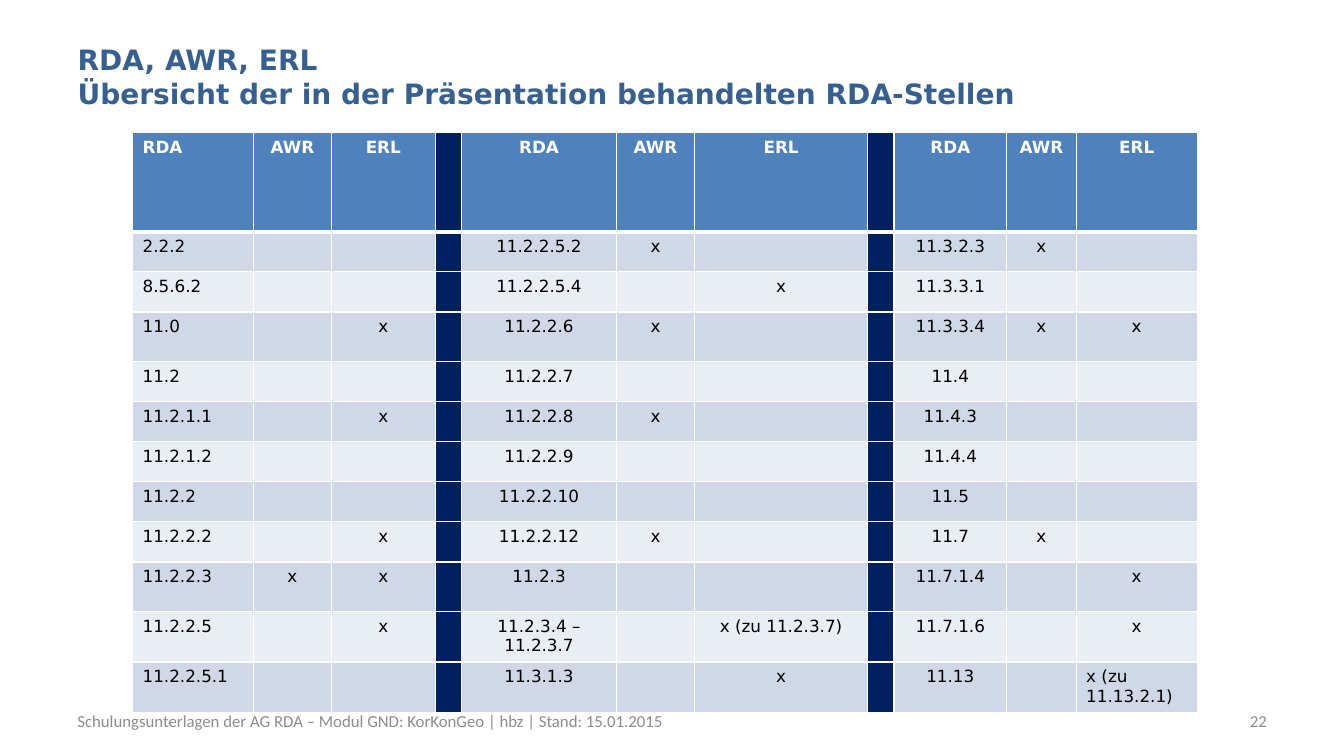
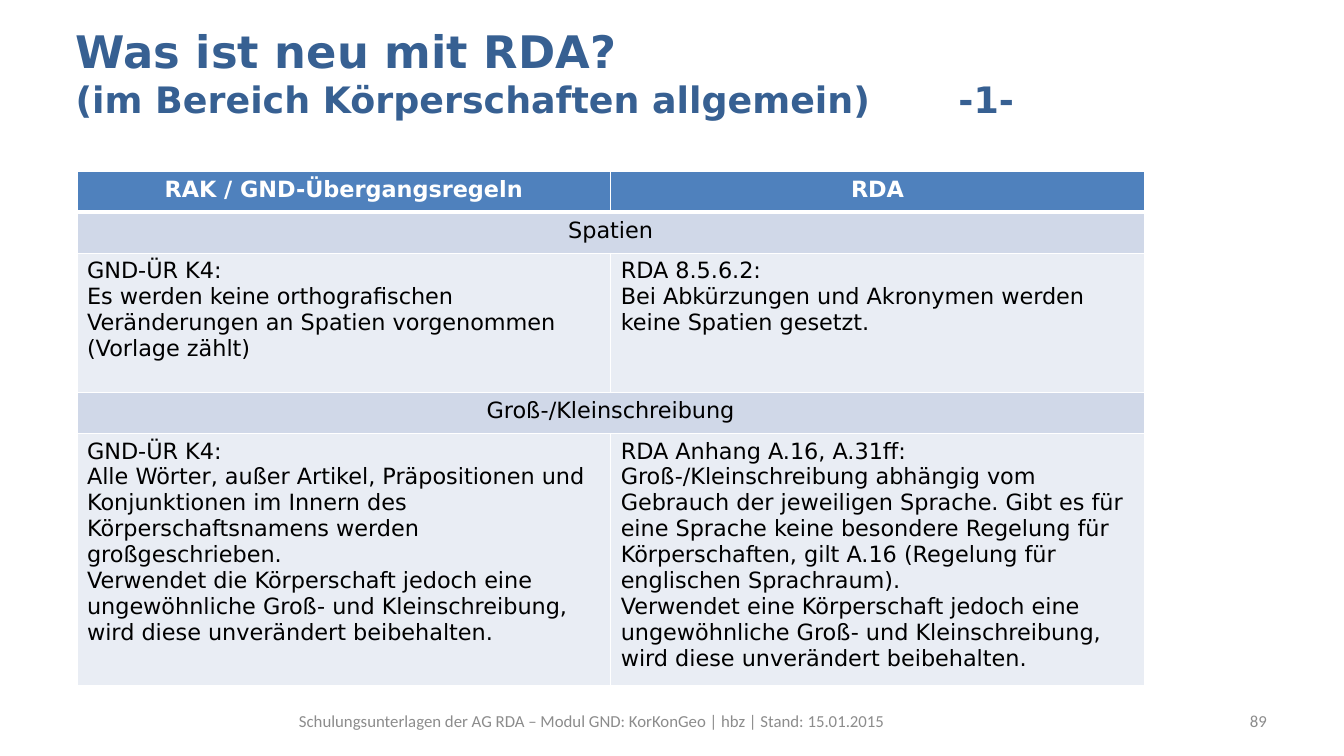
from lxml import etree
from pptx import Presentation
from pptx import util as u
from pptx.dml.color import RGBColor
from pptx.enum import text as t
from pptx.oxml import ns

INK = RGBColor(0x37, 0x60, 0x92)
HEAD = RGBColor(0x4F, 0x81, 0xBD)
NAVY = RGBColor(0x00, 0x20, 0x60)
DARK = RGBColor(0xD0, 0xD8, 0xE8)
PALE = RGBColor(0xE9, 0xED, 0xF4)
WHITE = RGBColor(0xFF, 0xFF, 0xFF)
BLACK = RGBColor(0, 0, 0)
GREY = RGBColor(0x8C, 0x8C, 0x8C)

LEFT, MID, RIGHT = t.PP_ALIGN.LEFT, t.PP_ALIGN.CENTER, t.PP_ALIGN.RIGHT
MAIN, FOOT = "DejaVu Sans", "Calibri"
CREDIT = "Schulungsunterlagen der AG RDA – Modul GND: KorKonGeo | hbz | Stand: 15.01.2015"

# Overview: three column groups of (RDA, AWR, ERL)
NAMES = ("RDA", "AWR", "ERL")
FIRST = [
    ("2.2.2", "", ""), ("8.5.6.2", "", ""), ("11.0", "", "x"), ("11.2", "", ""),
    ("11.2.1.1", "", "x"), ("11.2.1.2", "", ""), ("11.2.2", "", ""),
    ("11.2.2.2", "", "x"), ("11.2.2.3", "x", "x"), ("11.2.2.5", "", "x"),
    ("11.2.2.5.1", "", ""),
]
SECOND = [
    ("11.2.2.5.2", "x", ""), ("11.2.2.5.4", "", "x"), ("11.2.2.6", "x", ""),
    ("11.2.2.7", "", ""), ("11.2.2.8", "x", ""), ("11.2.2.9", "", ""),
    ("11.2.2.10", "", ""), ("11.2.2.12", "x", ""), ("11.2.3", "", ""),
    ("11.2.3.4 –\n11.2.3.7", "", "x (zu 11.2.3.7)"), ("11.3.1.3", "", "x"),
]
THIRD = [
    ("11.3.2.3", "x", ""), ("11.3.3.1", "", ""), ("11.3.3.4", "x", "x"),
    ("11.4", "", ""), ("11.4.3", "", ""), ("11.4.4", "", ""), ("11.5", "", ""),
    ("11.7", "x", ""), ("11.7.1.4", "", "x"), ("11.7.1.6", "", "x"),
    ("11.13", "", "x (zu 11.13.2.1)"),
]

# Comparison: a row with one entry spans the table
RULES = [
    ("RAK / GND-Übergangsregeln", "RDA"),
    ("Spatien",),
    ("GND-ÜR K4:\nEs werden keine orthografischen Veränderungen an Spatien "
     "vorgenommen (Vorlage zählt)",
     "RDA 8.5.6.2:\nBei Abkürzungen und Akronymen werden keine Spatien gesetzt."),
    ("Groß-/Kleinschreibung",),
    ("GND-ÜR K4:\nAlle Wörter, außer Artikel, Präpositionen und Konjunktionen im "
     "Innern des Körperschaftsnamens werden großgeschrieben.\n"
     "Verwendet die Körperschaft jedoch eine ungewöhnliche Groß- und "
     "Kleinschreibung, wird diese unverändert beibehalten.",
     "RDA Anhang A.16, A.31ff:\nGroß-/Kleinschreibung abhängig vom Gebrauch der "
     "jeweiligen Sprache. Gibt es für eine Sprache keine besondere Regelung für "
     "Körperschaften, gilt A.16 (Regelung für englischen Sprachraum).\n"
     "Verwendet eine Körperschaft jedoch eine ungewöhnliche Groß- und "
     "Kleinschreibung, wird diese unverändert beibehalten."),
]


def put(obj, **vals):
    for key, val in vals.items():
        setattr(obj, key, val)


def style(run, size, color, name=MAIN, bold=False):
    put(run.font, size=u.Pt(size), name=name, bold=bold)
    run.font.color.rgb = color


def place(shape, box):
    for key, val in zip(("left", "top", "width", "height"), box):
        setattr(shape, key, u.Cm(val))


def title(slide, box, lines, tab=None):
    """Format the title; lines are (text, size) pairs."""
    shape = slide.shapes.title
    place(shape, box)
    frame = shape.text_frame
    put(frame, word_wrap=True, auto_size=t.MSO_AUTO_SIZE.NONE,
        vertical_anchor=t.MSO_ANCHOR.MIDDLE)
    para = frame.paragraphs[0]
    para.alignment = LEFT
    if tab:
        stops = etree.SubElement(para._p.get_or_add_pPr(), ns.qn("a:tabLst"))
        etree.SubElement(stops, ns.qn("a:tab"), pos=str(u.Cm(tab)), algn="l")
    for i, (words, size) in enumerate(lines):
        if i:
            para.add_line_break()
        run = para.add_run()
        run.text = words
        style(run, size, INK, bold=True)


def label(slide, box, words, align):
    shape = slide.shapes.add_textbox(*map(u.Cm, box))
    frame = shape.text_frame
    put(frame, word_wrap=True, vertical_anchor=t.MSO_ANCHOR.MIDDLE)
    para = frame.paragraphs[0]
    para.alignment = align
    run = para.add_run()
    run.text = words
    style(run, 12, GREY, FOOT)


def footer(slide, number, align):
    label(slide, (1.7, 17.65, 26.44, 1.02), CREDIT, align)
    label(slide, (29.46, 17.65, 2.72, 1.02), str(number), RIGHT)


def border(cell, row):
    """White rules, with a thick one below the header row."""
    props = cell._tc.get_or_add_tcPr()
    wide = {"lnT": row == 1, "lnB": row == 0}
    for side in ("lnL", "lnR", "lnT", "lnB"):
        width = u.Pt(3 if wide.get(side) else 1)
        line = etree.SubElement(props, ns.qn("a:" + side), w=str(width))
        fill = etree.SubElement(line, ns.qn("a:solidFill"))
        etree.SubElement(fill, ns.qn("a:srgbClr"), val=str(WHITE))


def grid(slide, spot, cols, rows, data, size, left, bars=()):
    """Draw a banded table; left(row, col) tells which cells align left."""
    box = (*spot, sum(cols), sum(rows))
    frame = slide.shapes.add_table(len(rows), len(cols), *map(u.Cm, box))
    table = frame.table
    for col, width in zip(table.columns, cols):
        col.width = u.Cm(width)
    for i, (height, words) in enumerate(zip(rows, data)):
        table.rows[i].height = u.Cm(height)
        for j in range(len(cols)):
            cell = table.cell(i, j)
            border(cell, i)
            cell.fill.solid()
            band = HEAD if i == 0 else DARK if i % 2 else PALE
            cell.fill.fore_color.rgb = NAVY if j in bars else band
            if j >= len(words) or not words[j]:
                put(cell, margin_top=0, margin_bottom=0)
                continue
            cell.text = words[j]
            for para in cell.text_frame.paragraphs:
                para.alignment = LEFT if left(i, j) else MID
                style(para.runs[0], size, BLACK if i else WHITE, bold=i == 0)
        if len(words) < len(cols):
            table.cell(i, 0).merge(table.cell(i, len(cols) - 1))


def overview(slide):
    title(slide, (1.7, 0.33, 30.48, 3.18),
          [("RDA, AWR, ERL", 20),
           ("Übersicht der in der Präsentation behandelten RDA-Stellen", 20)])
    footer(slide, 22, LEFT)
    data = [(*a, "", *b, "", *c) for a, b, c in
            zip([NAMES] + FIRST, [NAMES] + SECOND, [NAMES] + THIRD)]
    cols = (3.05, 1.96, 2.62, 0.66, 3.91, 1.96, 4.37, 0.66, 2.84, 1.75, 3.05)
    tall = (3, 9, 10, 11)
    rows = [2.5] + [1.25 if i in tall else 1.01 for i in range(1, len(data))]
    grid(slide, (3.34, 3.34), cols, rows, data, 12,
         lambda i, j: j == 0 or (i, j) == (11, 10), bars=(3, 7))


def compare(slide):
    title(slide, (1.65, 0.42, 24.28, 2.79),
          [("Was ist neu mit RDA?", 32),
           ("(im Bereich Körperschaften allgemein)\t-1-", 26)], tab=22.25)
    footer(slide, 89, MID)
    grid(slide, (1.94, 4.32), (13.45, 13.45), (1.03, 1.03, 3.51, 1.03, 6.13),
         RULES, 16, lambda i, j: i in (2, 4))


def main():
    deck = Presentation()
    put(deck, slide_width=u.Cm(33.87), slide_height=u.Cm(19.05))
    for build in (overview, compare):
        build(deck.slides.add_slide(deck.slide_layouts[5]))
    deck.save("out.pptx")


if __name__ == "__main__":
    main()
